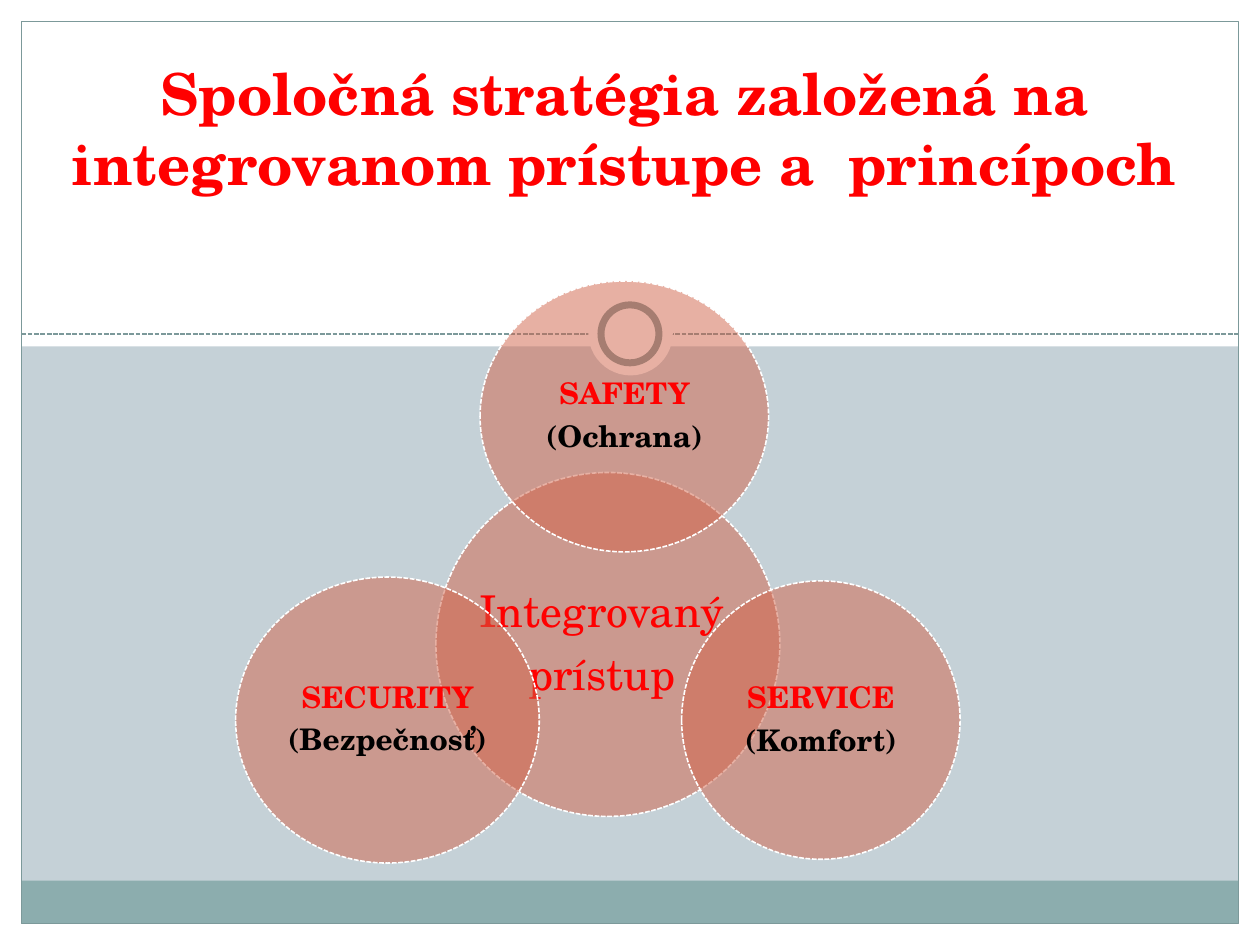
from lxml.etree import SubElement
from pptx import Presentation
from pptx.dml.color import RGBColor
from pptx.enum.dml import MSO_LINE as Dash
from pptx.enum.shapes import MSO_CONNECTOR as Conn, MSO_SHAPE as Shape
from pptx.enum.text import MSO_ANCHOR as Anchor, PP_ALIGN as Align
from pptx.oxml.ns import qn
from pptx.util import Inches, Pt

WHITE = RGBColor(0xFF, 0xFF, 0xFF)
BLACK = RGBColor(0, 0, 0)
RED = RGBColor(0xFF, 0, 0)
MIST = RGBColor(0xC5, 0xD1, 0xD7)
TEAL = RGBColor(0x8C, 0xAD, 0xAE)
GREY = RGBColor(0x7C, 0x99, 0x9A)
RUST = RGBColor(0xD1, 0x63, 0x49)


class Page:
    font = "TeX Gyre Schola"

    def __init__(self, slide):
        self.slide = slide
        back = slide.background.fill
        back.solid()
        back.fore_color.rgb = MIST

    def form(self, kind, box, fill=None, line=None, width=0.75):
        shape = self.slide.shapes.add_shape(kind, *map(Inches, box))
        shape.shadow.inherit = False
        if fill is None:
            shape.fill.background()
        else:
            shape.fill.solid()
            shape.fill.fore_color.rgb = fill
        if line is None:
            shape.line.fill.background()
        else:
            shape.line.color.rgb = line
            shape.line.width = Pt(width)
        return shape

    def rule(self, left, right, top):
        ends = map(Inches, (left, top, right, top))
        line = self.slide.shapes.add_connector(Conn.STRAIGHT, *ends)
        line.line.color.rgb = GREY
        line.line.width = Pt(0.9)
        line.line.dash_style = Dash.SQUARE_DOT
        SubElement(line._element.spPr, qn("a:effectLst"))

    def text(self, box, lines, size, bold, colors, anchor, pad=None):
        frame = self.slide.shapes.add_textbox(*map(Inches, box)).text_frame
        frame.word_wrap = True
        frame.vertical_anchor = anchor
        frame.text = "\n".join(lines)
        if pad is not None:
            frame.margin_left = frame.margin_right = Inches(pad)
            frame.margin_top = frame.margin_bottom = Inches(pad)
        for par, color in zip(frame.paragraphs, colors):
            par.alignment = Align.CENTER
            font = par.runs[0].font
            font.name, font.size, font.bold = self.font, Pt(size), bold
            font.color.rgb = color
        return frame

    def bubble(self, box, lines, size, bold, colors, pad):
        disc = self.form(Shape.OVAL, box, RUST, WHITE, 0.9)
        disc.line.dash_style = Dash.SQUARE_DOT
        tint = disc._element.spPr.find(qn("a:solidFill"))[0]
        SubElement(tint, qn("a:alpha"), val="50000")
        frame = self.text(box, lines, size, bold, colors, Anchor.MIDDLE, pad)
        for par in frame.paragraphs:
            par.line_spacing = 0.9
            par.space_after = Pt(round(size * 0.35))


def main():
    deck = Presentation()
    deck.slide_width, deck.slide_height = Inches(10), Inches(7.5)
    page = Page(deck.slides.add_slide(deck.slide_layouts[6]))

    edge = 0.17
    wide, high = 10 - 2 * edge, 7.5 - 2 * edge
    for box in ((0, 7.5 - edge, 10, edge), (10 - edge, 0, edge, 7.5),
                (0, 0, edge, 7.5), (0, 0, 10, 2.75)):
        page.form(Shape.RECTANGLE, box, WHITE)
    page.form(Shape.RECTANGLE, (edge, 6.99, wide, 0.34), TEAL)
    page.rule(edge, 10 - edge, 2.65)
    page.form(Shape.RECTANGLE, (edge, edge, wide, high), None, GREY)
    page.form(Shape.OVAL, (4.67, 2.31, 0.67, 0.67), WHITE)
    page.form(Shape.OVAL, (4.77, 2.42, 0.46, 0.46), WHITE, GREY, 4)

    title = "Spoločná stratégia založená na integrovanom prístupe a  princípoch"
    page.text((0.23, 0, 9.45, 1.61), [title], 33, True, [RED], Anchor.BOTTOM)

    page.bubble((3.46, 3.75, 2.73, 2.73), ["Integrovaný ", "prístup "],
                25, False, [RED, RED], 0.03)
    for box, name, gloss in (
        ((3.81, 2.23, 2.29, 2.15), "SAFETY", "(Ochrana)"),
        ((5.41, 4.61, 2.21, 2.21), "SERVICE", "(Komfort)"),
        ((1.87, 4.58, 2.41, 2.27), "SECURITY", "(Bezpečnosť)"),
    ):
        page.bubble(box, [name, gloss], 17, True, [RED, BLACK], 0.02)

    deck.save("out.pptx")


if __name__ == "__main__":
    main()
